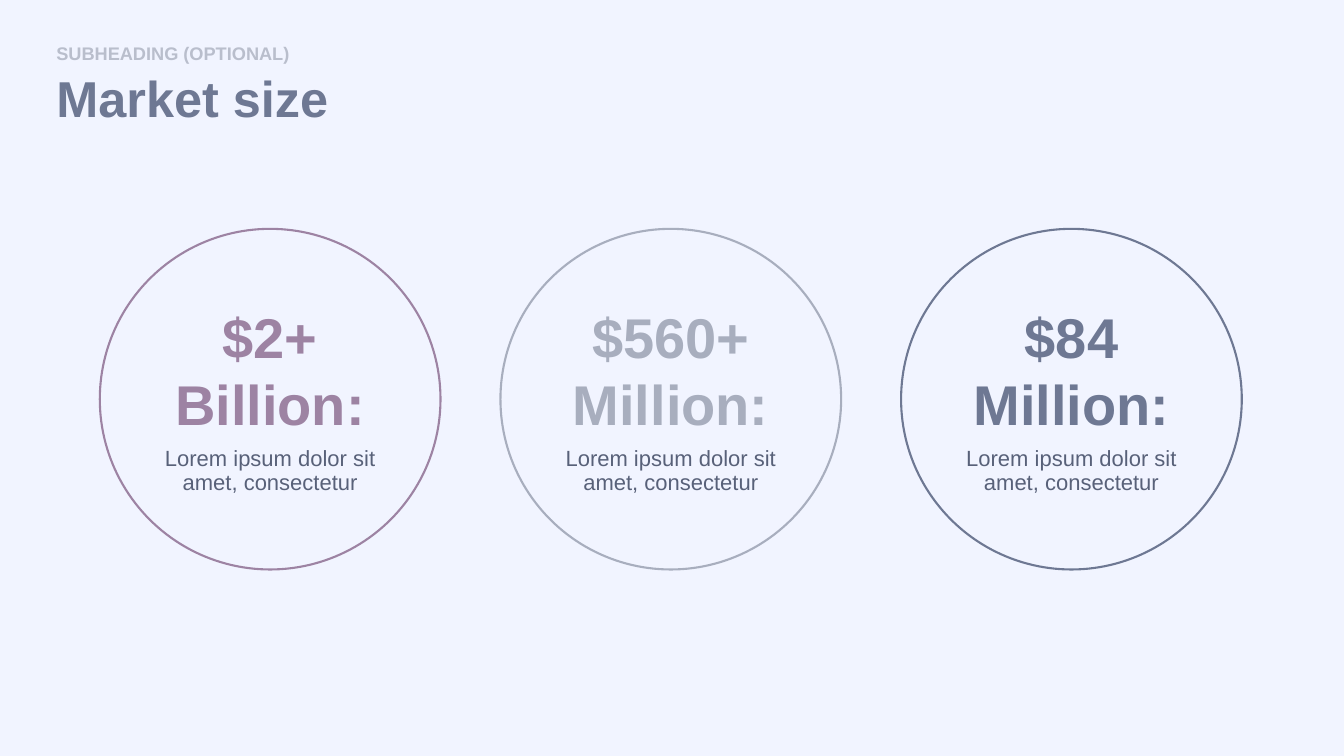
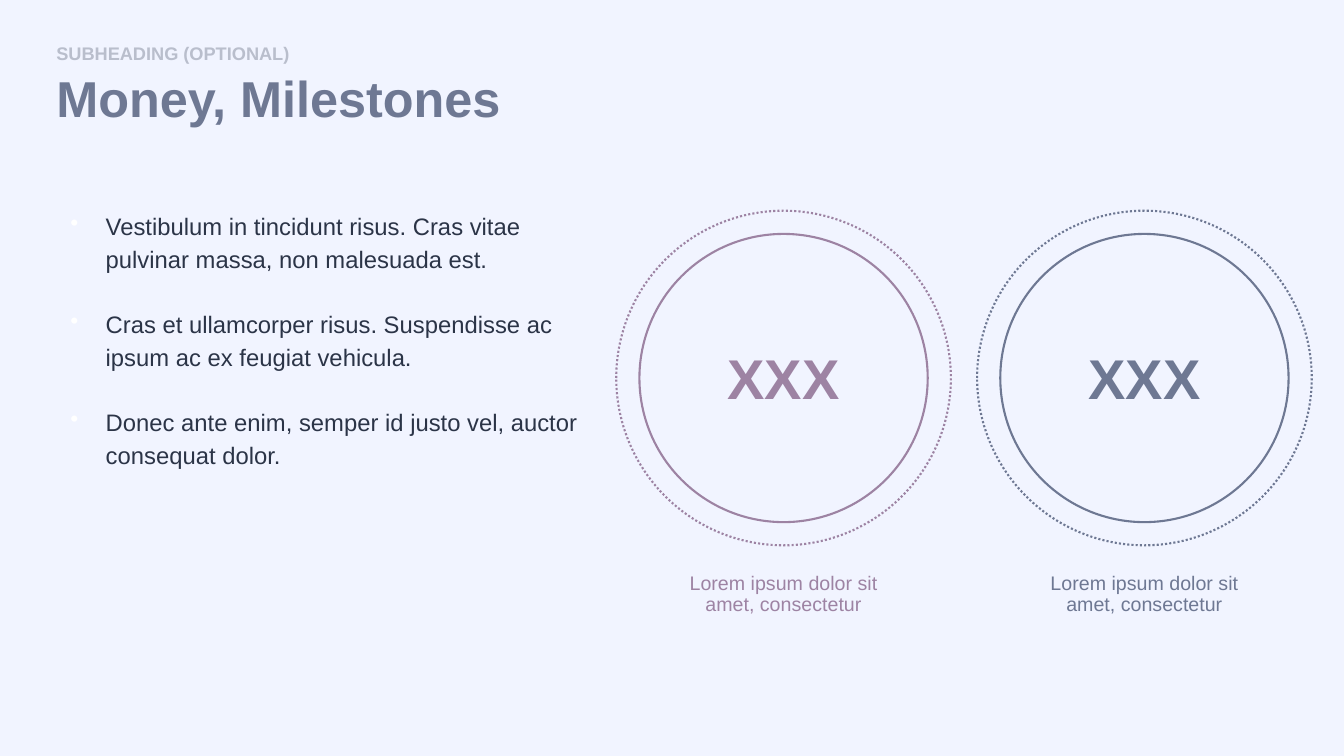
from pptx import Presentation
from pptx import util as u
from pptx.dml.color import RGBColor
from pptx.enum import dml, shapes, text
from pptx.oxml import parse_xml
from pptx.oxml.ns import nsdecls

COLOURS = {
    "paper": "F1F4FF",
    "slate": "6E7893",
    "mauve": "9D83A3",
    "silver": "A8AEBE",
    "subheading": "B9BECC",
    "caption": "586179",
    "body": "2B3447",
    "bullet": "FFFFFF",
}
RGB = {name: RGBColor.from_string(value) for name, value in COLOURS.items()}
CAPTION = "Lorem ipsum dolor sit amet, consectetur"
LEFT, CENTRE = text.PP_ALIGN.LEFT, text.PP_ALIGN.CENTER

prs = Presentation()
prs.slide_width, prs.slide_height = u.Inches(13.33), u.Inches(7.5)
X, Y = prs.slide_width / 100, prs.slide_height / 100  # one percent of the slide

background = prs.slide_master.background.fill
background.solid()
background.fore_color.rgb = RGB["paper"]


def write(sp, box, lines, size, colour, bold=False, align=LEFT, spacing=1.0):
    """Place sp at box (left, top, width, height in percent) and fill it with lines."""
    left, top, width, height = box
    sp.left, sp.top = int(left * X), int(top * Y)
    sp.width, sp.height = int(width * X), int(height * Y)
    tf = sp.text_frame
    tf.text = "\n".join(lines)
    tf.word_wrap = True
    tf.auto_size = text.MSO_AUTO_SIZE.NONE
    tf.vertical_anchor = text.MSO_ANCHOR.TOP
    for p in tf.paragraphs:
        p.alignment, p.line_spacing = align, spacing
        p.space_before = u.Pt(0)
        for r in p.runs:
            r.font.name, r.font.size, r.font.bold = "Arial", u.Pt(size), bold
            r.font.color.rgb = RGB[colour]
    return tf


def add_circle(s, cx, cy, diameter, colour, dotted=False):
    """Draw a circle round (cx, cy); the diameter is in percent of the width."""
    d = diameter * X
    sp = s.shapes.add_shape(shapes.MSO_SHAPE.OVAL, int(cx * X - d / 2),
                            int(cy * Y - d / 2), int(d), int(d))
    sp.shadow.inherit = False
    sp.line.color.rgb, sp.line.width = RGB[colour], u.Pt(1.5)
    if dotted:
        sp.fill.background()
        sp.line.dash_style = dml.MSO_LINE.ROUND_DOT
    else:
        sp.fill.solid()
        sp.fill.fore_color.rgb = RGB["paper"]


# Each row: centre y, diameter, ring diameter, first centre x, column pitch,
# number top and height, caption top and size, then the circles themselves.
decks = [
    ("Market size", 52.8, 25.35, None, 20.1, 29.81, 39.33, 21.33, 58.53, 15.7,
     [("$2+ Billion:", "mauve", "caption"),
      ("$560+ Million:", "silver", "caption"),
      ("$84 Million:", "slate", "caption")]),
    ("Money, Milestones", 50, 21.45, 24.9, 58.3, 26.85, 44.8, 10.4, 75.2, 14,
     [("XXX", "mauve", "mauve"), ("XXX", "slate", "slate")]),
]

for (title, cy, diameter, ring, first_cx, pitch, number_top, number_height,
     caption_top, caption_size, circles) in decks:
    s = prs.slides.add_slide(prs.slide_layouts[5])
    write(s.shapes.title, (3.45, 9.07, 92.33, 11.6), [title], 36, "slate",
          bold=True, spacing=0.9)
    write(s.shapes.add_textbox(0, 0, 0, 0), (3.45, 5.33, 46.58, 2.93),
          ["SUBHEADING (OPTIONAL)"], 13, "subheading", bold=True, spacing=0.9)

    for i, (number, colour, caption_colour) in enumerate(circles):
        cx = first_cx + i * pitch
        add_circle(s, cx, cy, diameter, colour)
        if ring:
            add_circle(s, cx, cy, ring, colour, dotted=True)
        write(s.shapes.add_textbox(0, 0, 0, 0),
              (cx - 9.15, number_top, 18.3, number_height),
              [number], 40, colour, bold=True, align=CENTRE)
        write(s.shapes.add_textbox(0, 0, 0, 0),
              (cx - 8.8, caption_top, 17.6, 8.53),
              [CAPTION], caption_size, caption_colour, align=CENTRE, spacing=0.9)

# The milestones slide is the last one made; its bullets stand left of the circles.
tf = write(s.shapes.add_textbox(0, 0, 0, 0), (3.38, 26.13, 41.03, 37.73), [
    "Vestibulum in tincidunt risus. Cras vitae pulvinar massa, non malesuada est.",
    "Cras et ullamcorper risus. Suspendisse ac ipsum ac ex feugiat vehicula.",
    "Donec ante enim, semper id justo vel, auctor consequat dolor.",
], 17, "body", spacing=1.15)
tf.margin_left = tf.margin_right = tf.margin_top = tf.margin_bottom = u.Inches(0.1)
for i, p in enumerate(tf.paragraphs):
    p.space_before = u.Pt(23 if i else 0)
    pPr = p._p.get_or_add_pPr()
    pPr.set("marL", str(u.Inches(0.5)))
    pPr.set("indent", str(u.Inches(-0.35)))
    pPr.append(parse_xml(f'<a:buClr {nsdecls("a")}><a:srgbClr val="{COLOURS["bullet"]}"/></a:buClr>'))
    pPr.append(parse_xml(f'<a:buChar {nsdecls("a")} char="•"/>'))

prs.save("out.pptx")
